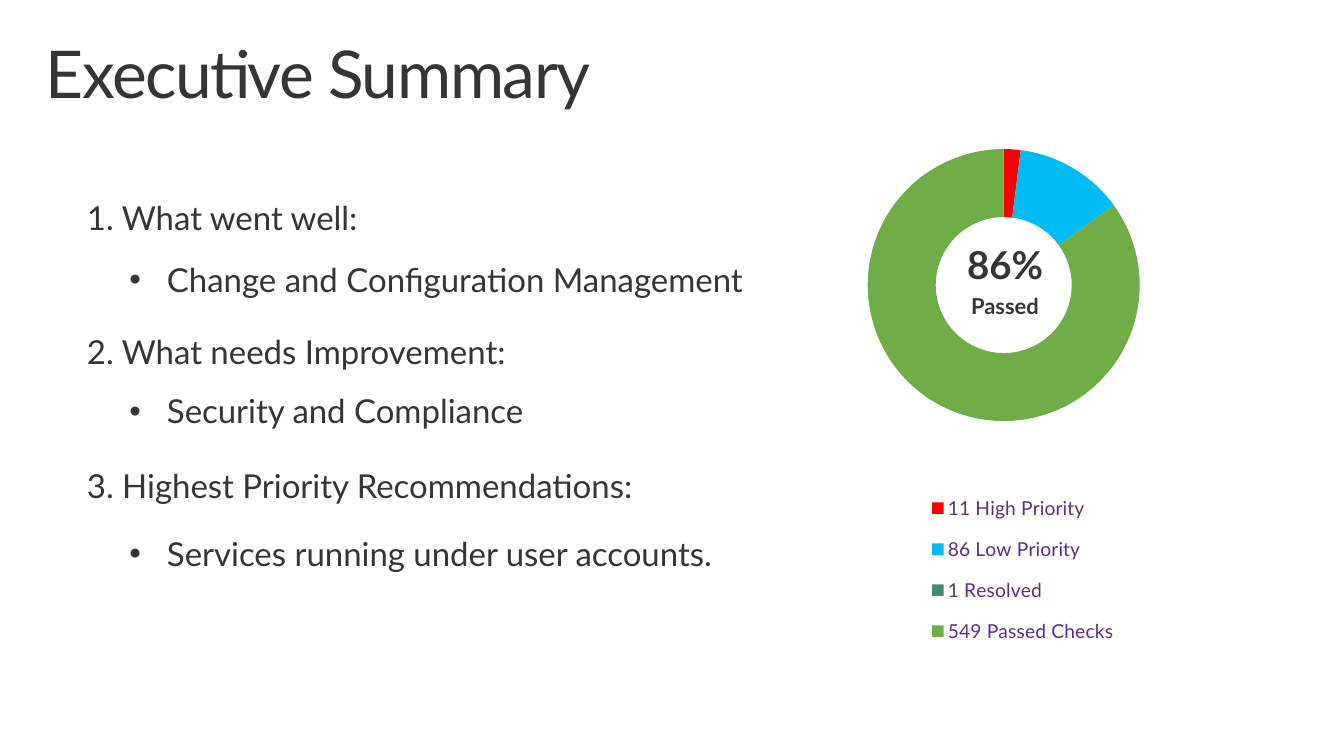
from dataclasses import dataclass

from lxml import etree
from pptx import Presentation
from pptx import util as u
from pptx.chart.data import CategoryChartData
from pptx.dml.color import RGBColor
from pptx.enum import chart as charts, text
from pptx.oxml import parse_xml
from pptx.oxml.ns import nsdecls, qn


@dataclass(frozen=True)
class Theme:
    font: str = "Lato"
    ink: str = "353535"
    legend: str = "5B2D91"
    title_size: int = 48
    body_size: int = 24
    percent_size: int = 28
    caption_size: int = 16
    legend_size: int = 14
    chart_size: int = 10


# Category, value and colour; the unnamed ones are empty spacers
CHECKS = [
    ("11 High Priority", 2, "FF0000"),
    ("", None, "001D49"),
    ("86 Low Priority", 13, "00BCF2"),
    ("", None, "A3008F"),
    ("1 Resolved", 0, "458B74"),
    ("", None, "D1D1D1"),
    ("549 Passed Checks", 85, "70AD47"),
]

# Heading, finding and top of the finding
FINDINGS = [
    ("1. What went well:", "Change and Configuration Management", 2.51),
    ("2. What needs Improvement:", "Security and Compliance", 3.84),
    ("3. Highest Priority Recommendations:",
     "Services running under user accounts.", 5.28),
]
HEADING_TOP, HEADING_STEP = 1.88, 1.36


class SlideBuilder:
    def __init__(self, prs, theme):
        self.theme = theme
        self.slide = prs.slides.add_slide(prs.slide_layouts[5])

    def style(self, font, size, color=None, bold=False):
        font.name = self.theme.font
        font.size = u.Pt(size)
        font.bold = bold
        font.color.rgb = RGBColor.from_string(color or self.theme.ink)

    def frame(self, sp, inset_x, inset_y):
        tf = sp.text_frame
        tf.word_wrap = True
        tf.vertical_anchor = text.MSO_ANCHOR.TOP
        tf.margin_left = tf.margin_right = u.Inches(inset_x)
        tf.margin_top = tf.margin_bottom = u.Inches(inset_y)
        return tf

    def run(self, p, words, size, bold=False):
        p.line_spacing = 0.9
        r = p.add_run()
        r.text = words
        self.style(r.font, size, bold=bold)
        return r

    def title(self, words, left, top, width, height):
        sp = self.slide.shapes.title
        sp.left, sp.top = u.Inches(left), u.Inches(top)
        sp.width, sp.height = u.Inches(width), u.Inches(height)
        tf = self.frame(sp, 0.16, 0.1)
        tf.auto_size = text.MSO_AUTO_SIZE.NONE
        p = tf.paragraphs[0]
        p.alignment = text.PP_ALIGN.LEFT
        r = self.run(p, words, self.theme.title_size)
        r.font._element.set("spc", "-100")

    def textbox(self, lines, left, top, width, height,
                align=text.PP_ALIGN.LEFT, bold=False, bullet=False):
        sp = self.slide.shapes.add_textbox(
            u.Inches(left), u.Inches(top), u.Inches(width), u.Inches(height))
        tf = self.frame(sp, 0.2, 0.16)
        tf.auto_size = text.MSO_AUTO_SIZE.SHAPE_TO_FIT_TEXT
        for i, (words, size) in enumerate(lines):
            p = tf.add_paragraph() if i else tf.paragraphs[0]
            p.alignment = align
            p.space_after = u.Pt(6)
            self.run(p, words, size, bold)
            if bullet:
                self.bullet(p)

    def bullet(self, p):
        indent = u.Inches(0.38)
        props = p._p.get_or_add_pPr()
        props.set("marL", str(indent))
        props.set("indent", str(-indent))
        etree.SubElement(props, qn("a:buFont")).set("typeface", "Arial")
        etree.SubElement(props, qn("a:buChar")).set("char", "•")

    def layout(self, x, y, w, h, inner=False):
        target = '<c:layoutTarget val="inner"/>' if inner else ""
        return parse_xml(
            f'<c:layout {nsdecls("c")}><c:manualLayout>{target}'
            '<c:xMode val="edge"/><c:yMode val="edge"/>'
            f'<c:x val="{x}"/><c:y val="{y}"/><c:w val="{w}"/><c:h val="{h}"/>'
            '</c:manualLayout></c:layout>')

    def doughnut(self, checks, left, top, width, height):
        data = CategoryChartData()
        data.categories = [name for name, _, _ in checks]
        data.add_series("Series 1", [value for _, value, _ in checks])
        chart = self.slide.shapes.add_chart(
            charts.XL_CHART_TYPE.DOUGHNUT, u.Inches(left), u.Inches(top),
            u.Inches(width), u.Inches(height), data).chart
        chart.has_title = False
        self.style(chart.font, self.theme.chart_size)

        # Ring
        plot = chart.plots[0]
        plot.vary_by_categories = True
        plot.has_data_labels = False
        for i, (_, _, color) in enumerate(checks):
            fmt = plot.series[0].points[i].format
            fmt.fill.solid()
            fmt.fill.fore_color.rgb = RGBColor.from_string(color)
            fmt.line.fill.background()
        plot._element.find(qn("c:holeSize")).set("val", "68")
        area = plot._element.getparent()
        for old in area.findall(qn("c:layout")):
            area.remove(old)
        area.insert(0, self.layout(0.23, 0.07, 0.57, 0.56, inner=True))

        # Legend without the spacers
        chart.has_legend = True
        legend = chart.legend
        legend.position = charts.XL_LEGEND_POSITION.BOTTOM
        legend.include_in_layout = False
        self.style(legend.font, self.theme.legend_size, self.theme.legend)
        element = legend._element
        for old in element.findall(qn("c:layout")):
            element.remove(old)
        parts = [parse_xml(f'<c:legendEntry {nsdecls("c")}><c:idx val="{i}"/>'
                           '<c:delete val="1"/></c:legendEntry>')
                 for i, (name, _, _) in enumerate(checks) if not name]
        parts.append(self.layout(0.33, 0.66, 0.45, 0.29))
        for i, part in enumerate(parts, 1):
            element.insert(i, part)


def main():
    prs = Presentation()
    prs.slide_width, prs.slide_height = u.Inches(13.6), u.Inches(7.65)
    theme = Theme()
    s = SlideBuilder(prs, theme)
    s.title("Executive Summary", 0.3, 0.32, 13, 1)

    # Check results
    s.doughnut(CHECKS, 7.67, 0.67, 4.83, 6.33)
    s.textbox([("86%", theme.percent_size), ("Passed", theme.caption_size)],
              9.46, 2.33, 1.42, 3.19, align=text.PP_ALIGN.CENTER, bold=True)

    # Findings
    for i, (heading, finding, finding_top) in enumerate(FINDINGS):
        s.textbox([(heading, theme.body_size)],
                  0.68, HEADING_TOP + i * HEADING_STEP, 6.04, 0.69)
        s.textbox([(finding, theme.body_size)],
                  1.11, finding_top, 7.01, 0.69, bullet=True)

    prs.save("out.pptx")


if __name__ == "__main__":
    main()
